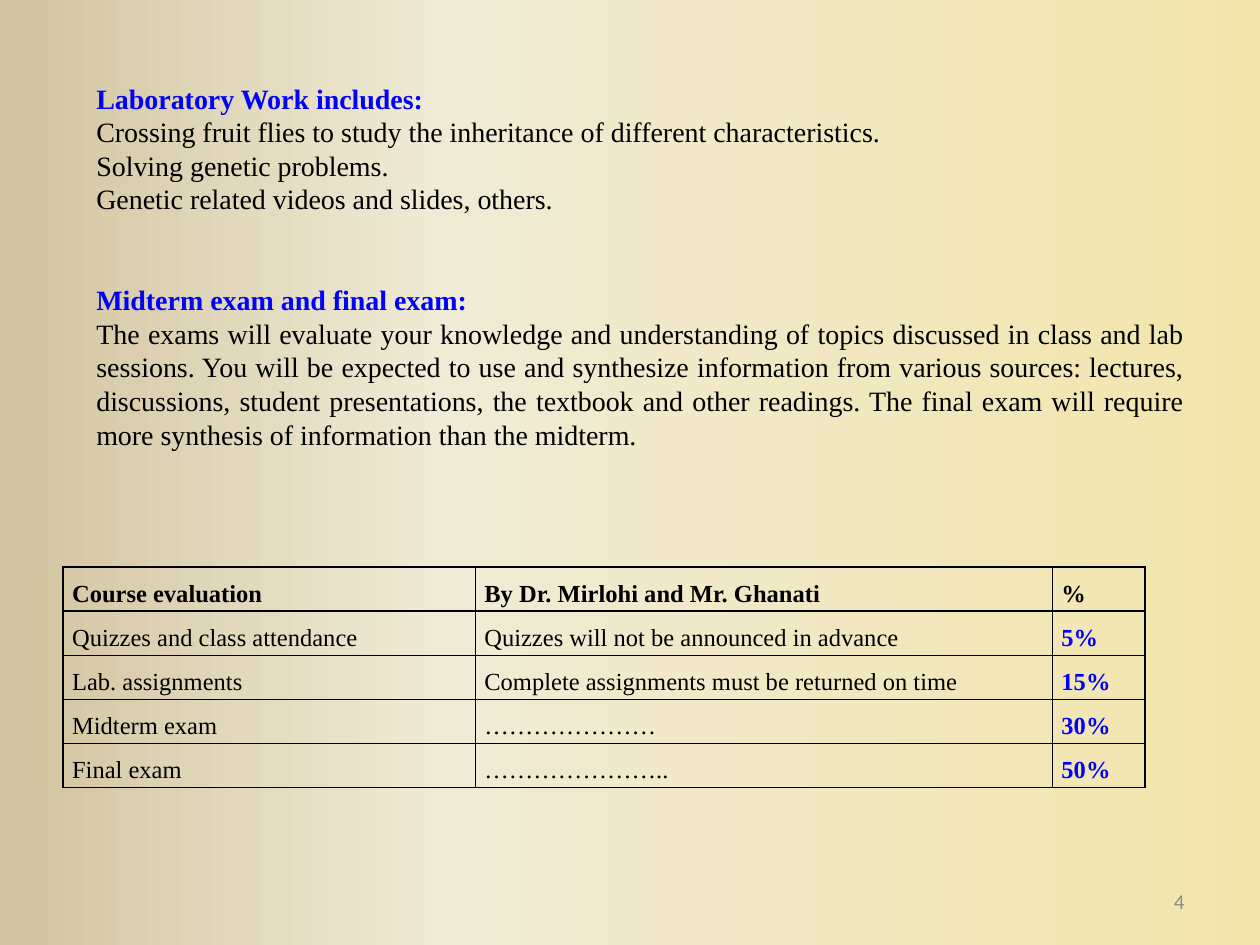
from lxml.etree import fromstring
from pptx import Presentation
from pptx.dml.color import RGBColor
from pptx.enum.text import MSO_ANCHOR as Anchor, PP_ALIGN as Align
from pptx.oxml.ns import nsdecls
from pptx.util import Pt

# Content: (text, is heading, space before in points)
COURSE_NOTES = [
    ("Laboratory Work includes:", True, 0),
    ("Crossing fruit flies to study the inheritance of different characteristics.", False, 0),
    ("Solving genetic problems.", False, 0),
    ("Genetic related videos and slides, others.", False, 0),
    ("Midterm exam and final exam:", True, 38.4),
    ("The exams will evaluate your knowledge and understanding of topics discussed "
     "in class and lab sessions. You will be expected to use and synthesize "
     "information from various sources: lectures, discussions, student presentations, "
     "the textbook and other readings. The final exam will require more synthesis of "
     "information than the midterm.", False, 0),
]
EVALUATION = [
    ("Course evaluation", "By Dr. Mirlohi and Mr. Ghanati", "%"),
    ("Quizzes and class attendance", "Quizzes will not be announced in advance", "5%"),
    ("Lab. assignments", "Complete assignments must be returned on time", "15%"),
    ("Midterm exam", "…………………", "30%"),
    ("Final exam", "…………………..", "50%"),
]
PAGE_NUMBER = "4"

COLORS = {"text": "000000", "accent": "0000FF", "page": "8C8C8C"}
BACKGROUND = [(0, "F2E5AC"), (65, "F0EBD5"), (100, "D1C39F")]
SERIF, SANS = "Times New Roman", "Calibri"
COLUMN_WIDTHS = (235.6, 329.8, 52.8)
ROW_HEIGHT = 22.2


def add_run(paragraph, text, size, color, bold=False, font=SERIF):
    run = paragraph.add_run()
    run.text = text
    run.font.name, run.font.size, run.font.bold = font, Pt(size), bold
    run.font.color.rgb = RGBColor.from_string(COLORS[color])


def add_text_frame(slide, left, top, width, height):
    frame = slide.shapes.add_textbox(Pt(left), Pt(top), Pt(width), Pt(height)).text_frame
    frame.word_wrap = True
    frame.vertical_anchor = Anchor.MIDDLE
    return frame


def paint_background(slide):
    fill = slide.background.fill
    fill.gradient()
    fill.gradient_angle = 180
    stops = "".join(f'<a:gs pos="{pos * 1000}"><a:srgbClr val="{color}"/></a:gs>'
                    for pos, color in BACKGROUND)
    grad = slide.background._cSld.find(".//{*}gradFill")
    grad.replace(grad.find("{*}gsLst"),
                 fromstring(f'<a:gsLst {nsdecls("a")}>{stops}</a:gsLst>'))
    line = grad.find("{*}lin")
    line.set("ang", str(180 * 60000))


def add_borders(cell):
    properties = cell._tc.get_or_add_tcPr()
    for index, side in enumerate(("lnL", "lnR", "lnT", "lnB")):
        properties.insert(index, fromstring(
            f'<a:{side} {nsdecls("a")} w="12700"><a:solidFill>'
            f'<a:srgbClr val="{COLORS["text"]}"/></a:solidFill></a:{side}>'))


deck = Presentation()
deck.slide_width, deck.slide_height = Pt(720), Pt(540)
slide = deck.slides.add_slide(deck.slide_layouts[6])
paint_background(slide)

# Page number
page = add_text_frame(slide, 516, 500.5, 168, 28.8).paragraphs[0]
page.alignment = Align.RIGHT
add_run(page, PAGE_NUMBER, 12, "page", font=SANS)

# Evaluation table
table = slide.shapes.add_table(
    len(EVALUATION), len(COLUMN_WIDTHS), Pt(36), Pt(324),
    Pt(sum(COLUMN_WIDTHS)), Pt(ROW_HEIGHT * len(EVALUATION))).table
table.first_row = table.horz_banding = False
for column, width in zip(table.columns, COLUMN_WIDTHS):
    column.width = Pt(width)
for r, row in enumerate(EVALUATION):
    for c, text in enumerate(row):
        cell = table.cell(r, c)
        cell.fill.background()
        cell.margin_left = cell.margin_right = Pt(5.2)
        cell.margin_top = cell.margin_bottom = 0
        add_borders(cell)
        paragraph = cell.text_frame.paragraphs[0]
        paragraph.alignment = Align.JUSTIFY
        paragraph.line_spacing = 1.5
        is_header, is_share = r == 0, c == 2
        add_run(paragraph, text, 14, "accent" if is_share and not is_header else "text",
                bold=is_header or is_share)

# Laboratory and exam notes
notes = add_text_frame(slide, 48, 41.8, 635.8, 220.3)
for i, (text, is_heading, space_before) in enumerate(COURSE_NOTES):
    paragraph = notes.paragraphs[0] if i == 0 else notes.add_paragraph()
    paragraph.alignment = Align.JUSTIFY
    paragraph.space_before = Pt(space_before)
    add_run(paragraph, text, 16, "accent" if is_heading else "text", bold=is_heading)

deck.save("out.pptx")
